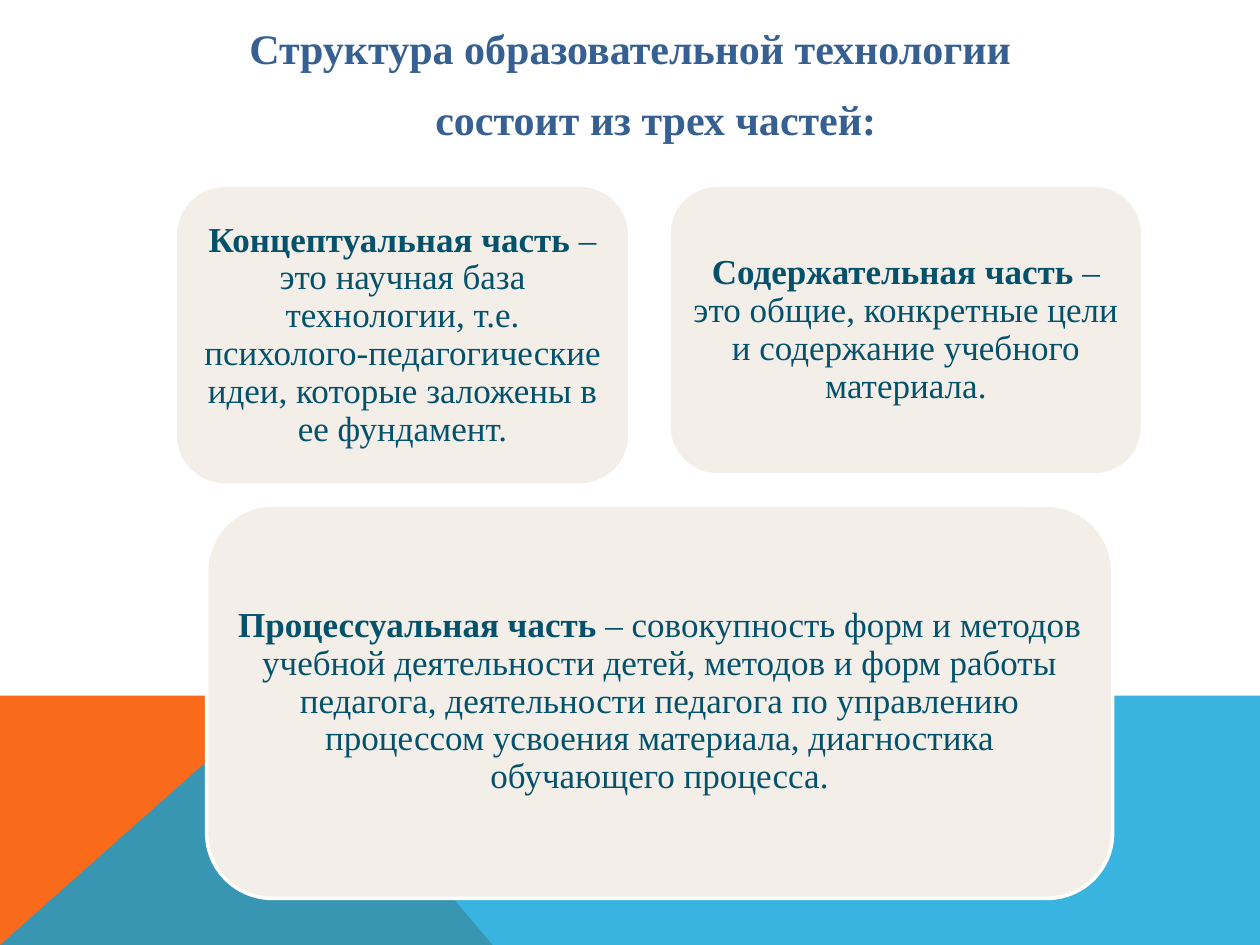
from lxml import etree
from pptx import Presentation, util as u
from pptx.dml.color import RGBColor
from pptx.enum import shapes, text
from pptx.oxml.ns import qn

COLORS = {
    "orange": "F96A1B",
    "blue": "08A1D9",
    "card": "F3EFE8",
    "white": "FFFFFF",
    "body": "04516C",
    "title": "376092",
}
FONT = "Times New Roman"

CARDS = [
    ((1.39, 1.47, 3.61, 2.38), "Концептуальная часть ",
     "– это научная база технологии, т.е. психолого-педагогические идеи, "
     "которые заложены в ее фундамент."),
    ((5.31, 1.47, 3.76, 2.3), "Содержательная часть ",
     "– это общие, конкретные цели и содержание учебного материала."),
    ((1.64, 4.01, 7.19, 3.12), "Процессуальная часть ",
     "– совокупность форм и методов учебной деятельности детей, методов и форм "
     "работы педагога, деятельности педагога по управлению процессом усвоения "
     "материала, диагностика обучающего процесса."),
]


def rgb(name):
    return RGBColor.from_string(COLORS[name])


def add_run(p, content, size, color, bold):
    r = p.add_run()
    r.text = content
    r.font.name = FONT
    r.font.size = u.Pt(size)
    r.font.bold = bold
    r.font.color.rgb = rgb(color)


def place(sp, box):
    sp.left, sp.top, sp.width, sp.height = map(u.Inches, box)


def add_band(s, points, color, opacity=100):
    start, *rest = [(u.Inches(x), u.Inches(y)) for x, y in points]
    builder = s.shapes.build_freeform(*start)
    builder.add_line_segments(rest, close=True)
    sp = builder.convert_to_shape()
    sp.shadow.inherit = False
    sp.fill.solid()
    sp.fill.fore_color.rgb = rgb(color)
    sp.line.fill.background()
    if opacity < 100:
        clr = sp.fill._xPr.find(".//" + qn("a:srgbClr"))
        etree.SubElement(clr, qn("a:alpha"), val=str(opacity * 1000))


def add_footer(s, box):
    x, y, w, h = box
    right, bottom, peak = x + w, y + h, x + 2.23
    add_band(s, [(x, bottom), (x, y), (peak, y), (x + 3.91, bottom)], "orange")
    add_band(s, [(x, bottom), (peak, y), (right, y), (right, bottom)], "blue", 80)


def add_card(s, box, term, definition):
    sp = s.shapes.add_shape(shapes.MSO_SHAPE.ROUNDED_RECTANGLE, *map(u.Inches, box))
    sp.shadow.inherit = False
    sp.fill.solid()
    sp.fill.fore_color.rgb = rgb("card")
    sp.line.color.rgb = rgb("white")
    sp.line.width = u.Pt(2)
    tf = sp.text_frame
    tf.word_wrap = True
    tf.vertical_anchor = text.MSO_ANCHOR.MIDDLE
    tf.margin_left = tf.margin_right = u.Inches(0.08)
    tf.margin_top = tf.margin_bottom = u.Inches(0.08)
    p = tf.paragraphs[0]
    p.alignment = text.PP_ALIGN.CENTER
    p.line_spacing = 0.9
    add_run(p, term, 20, "body", True)
    add_run(p, definition, 20, "body", False)


def add_heading_line(sp, box, content, spacing, indent=0):
    place(sp, box)
    tf = sp.text_frame
    tf.word_wrap = True
    tf.auto_size = text.MSO_AUTO_SIZE.NONE
    tf.vertical_anchor = text.MSO_ANCHOR.TOP
    p = tf.paragraphs[0]
    p.alignment = text.PP_ALIGN.CENTER
    p.line_spacing = spacing
    p._p.get_or_add_pPr().set("indent", str(u.Inches(indent)))
    add_run(p, content, 24, "title", True)


def add_heading(s, box):
    x, y, w, h = box
    add_heading_line(s.shapes.title, (x, y, w, 0.5),
                     "Структура образовательной технологии", 1.0)
    subtitle = s.shapes.add_textbox(0, 0, 0, 0)
    add_heading_line(subtitle, (x + 0.79, y + 0.5, 6.06, h - 0.5),
                     "состоит из трех частей:", 1.15, 0.49)


def main():
    prs = Presentation()
    prs.slide_width, prs.slide_height = u.Inches(10), u.Inches(7.5)
    s = prs.slides.add_slide(prs.slide_layouts[5])
    add_footer(s, (0, 5.52, 10, 1.98))
    for box, term, definition in CARDS:
        add_card(s, box, term, definition)
    add_heading(s, (1.14, 0.13, 7.72, 1.04))
    prs.save("out.pptx")


if __name__ == "__main__":
    main()
